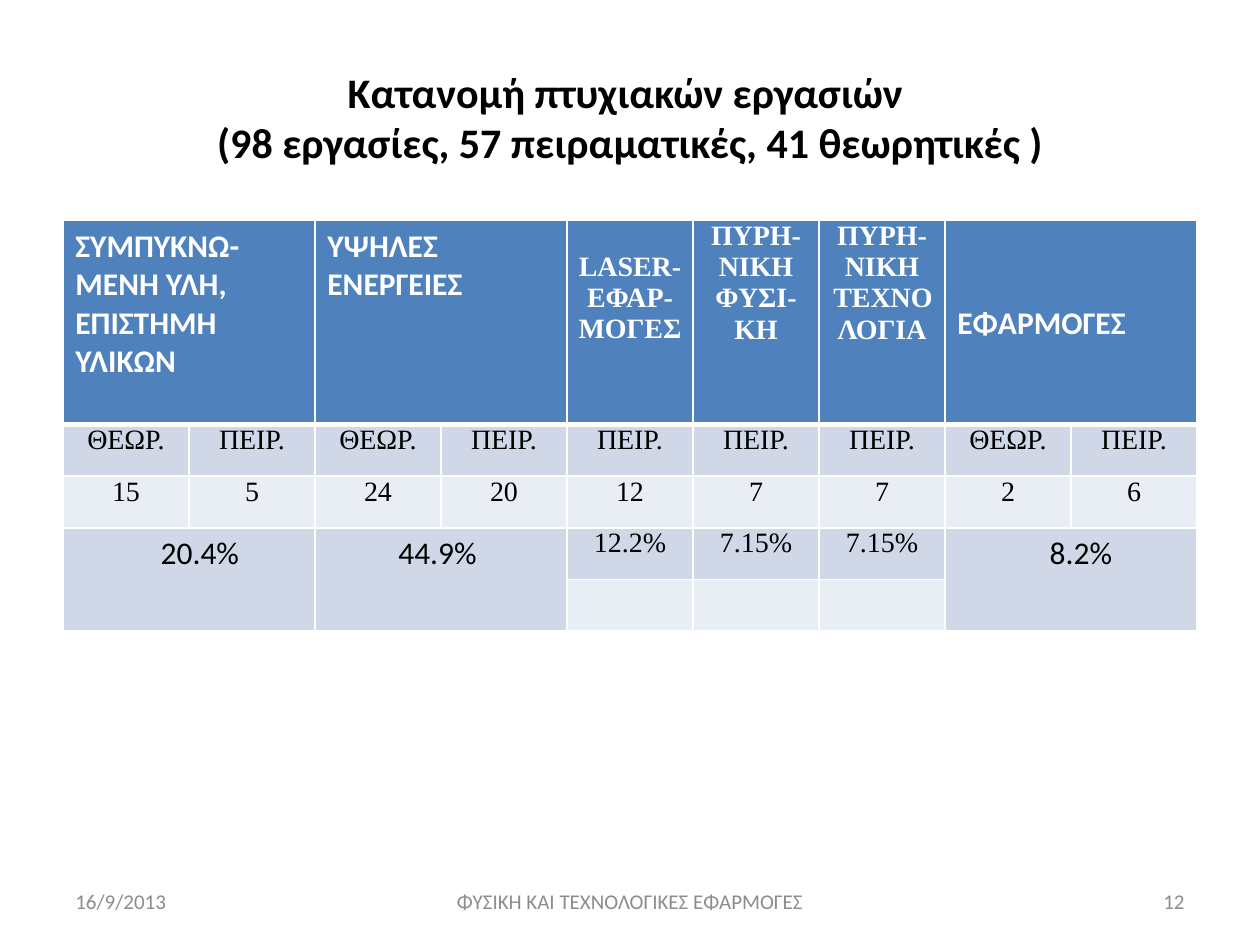
from lxml import etree
from pptx import Presentation
from pptx.dml.color import RGBColor
from pptx.enum.text import MSO_ANCHOR, PP_ALIGN
from pptx.oxml.ns import qn
from pptx.util import Cm, Pt

LEFT, CENTER, RIGHT = PP_ALIGN.LEFT, PP_ALIGN.CENTER, PP_ALIGN.RIGHT
MIDDLE = MSO_ANCHOR.MIDDLE
TITLE_ONLY = 5
SANS, SERIF = "Calibri", "Times New Roman"
COLORS = {
    "text": "000000",
    "white": "FFFFFF",
    "header": "4F81BD",
    "band": "D0D8E8",
    "light": "E9EDF4",
    "footer": "8C8C8C",
}


class SlideBuilder:
    def __init__(self, slide):
        self.slide = slide

    def add_run(self, paragraph, text, size, font=SANS, color="text", bold=False):
        run = paragraph.add_run()
        run.text = text
        run.font.name = font
        run.font.size = Pt(size)
        run.font.bold = bold
        run.font.color.rgb = RGBColor.from_string(COLORS[color])

    def title(self, lines, left, top, width, height):
        shape = self.slide.shapes.title
        shape.left, shape.top = Cm(left), Cm(top)
        shape.width, shape.height = Cm(width), Cm(height)
        shape.text_frame.vertical_anchor = MIDDLE
        paragraph = shape.text_frame.paragraphs[0]
        paragraph.alignment = CENTER
        for index, line in enumerate(lines):
            if index:
                paragraph.add_line_break()
            self.add_run(paragraph, line, 24, bold=True)

    def footer(self, text, left, width, alignment):
        shape = self.slide.shapes.add_textbox(Cm(left), Cm(17.65), Cm(width), Cm(1.02))
        frame = shape.text_frame
        frame.word_wrap = True
        frame.vertical_anchor = MIDDLE
        paragraph = frame.paragraphs[0]
        paragraph.alignment = alignment
        self.add_run(paragraph, text, 12, color="footer")

    def table(self, left, top, column_width, row_heights, columns):
        rows = len(row_heights)
        shape = self.slide.shapes.add_table(
            rows, columns, Cm(left), Cm(top), Cm(column_width * columns), Cm(sum(row_heights))
        )
        table = shape.table
        for column in table.columns:
            column.width = Cm(column_width)
        for row, height in zip(table.rows, row_heights):
            row.height = Cm(height)
        for row in range(rows):
            fill = "header" if row == 0 else ("band" if row % 2 else "light")
            for column in range(columns):
                cell = table.cell(row, column)
                self.borders(cell, top=3 if row == 1 else 1, bottom=3 if row == 0 else 1)
                cell.fill.solid()
                cell.fill.fore_color.rgb = RGBColor.from_string(COLORS[fill])
        return table

    def borders(self, cell, top, bottom):
        properties = cell._tc.get_or_add_tcPr()
        for tag, width in (("a:lnL", 1), ("a:lnR", 1), ("a:lnT", top), ("a:lnB", bottom)):
            line = etree.SubElement(properties, qn(tag), w=str(Pt(width)))
            fill = etree.SubElement(line, qn("a:solidFill"))
            etree.SubElement(fill, qn("a:srgbClr"), val=COLORS["white"])

    def wide_cell(self, cell, texts, indent=0.0, drop=0.0, **style):
        cell.margin_left = Cm(0.25 + indent)
        cell.margin_top = Cm(0.13 + drop)
        for index, text in enumerate(texts):
            frame = cell.text_frame
            paragraph = frame.add_paragraph() if index else frame.paragraphs[0]
            paragraph.alignment = LEFT
            self.add_run(paragraph, text, 18, **style)

    def narrow_cell(self, cell, text, drop=0.0, **style):
        cell.margin_left = cell.margin_right = Cm(0.18)
        cell.margin_top, cell.margin_bottom = Cm(drop), Cm(0)
        paragraph = cell.text_frame.paragraphs[0]
        paragraph.alignment = CENTER
        self.add_run(paragraph, text, 16, font=SERIF, **style)


def main():
    presentation = Presentation()
    presentation.slide_width, presentation.slide_height = Cm(25.4), Cm(19.05)
    slide = presentation.slides.add_slide(presentation.slide_layouts[TITLE_ONLY])
    builder = SlideBuilder(slide)

    # Title
    builder.title(
        ["Κατανομή πτυχιακών εργασιών ", "(98 εργασίες, 57 πειραματικές, 41 θεωρητικές )"],
        1.27, 0.76, 22.86, 3.18,
    )

    # Table grid
    table = builder.table(1.27, 4.45, 2.54, [4.11] + [1.04] * 4, 9)
    header_style = {"color": "white", "bold": True}

    # Fields with two columns: column, heading, heading drop, share, share indent
    wide_fields = [
        (0, ["ΣΥΜΠΥΚΝΩ-ΜΕΝΗ ΥΛΗ,", "ΕΠΙΣΤΗΜΗ ΥΛΙΚΩΝ"], 0, "20.4%", 1.72),
        (2, ["ΥΨΗΛΕΣ ΕΝΕΡΓΕΙΕΣ"], 0, "44.9%", 1.43),
        (7, ["ΕΦΑΡΜΟΓΕΣ"], 1.55, "8.2%", 1.86),
    ]
    for column, heading, drop, share, indent in wide_fields:
        table.cell(0, column).merge(table.cell(0, column + 1))
        table.cell(3, column).merge(table.cell(4, column + 1))
        builder.wide_cell(table.cell(0, column), heading, drop=drop, **header_style)
        builder.wide_cell(table.cell(3, column), [share], indent=indent)

    # Fields with one column: column, heading, heading drop, share
    narrow_fields = [
        (4, "LASER- ΕΦΑΡ-ΜΟΓΕΣ", 0.62, "12.2%"),
        (5, "ΠΥΡΗ-ΝΙΚΗ ΦΥΣΙ-ΚΗ", 0, "7.15%"),
        (6, "ΠΥΡΗ-ΝΙΚΗ ΤΕΧΝΟΛΟΓΙΑ", 0, "7.15%"),
    ]
    for column, heading, drop, share in narrow_fields:
        builder.narrow_cell(table.cell(0, column), heading, drop=drop, **header_style)
        builder.narrow_cell(table.cell(3, column), share)

    # Kind and number of theses
    theory_columns = {column for column, *_ in wide_fields}
    for column, count in enumerate([15, 5, 24, 20, 12, 7, 7, 2, 6]):
        kind = "ΘΕΩΡ." if column in theory_columns else "ΠΕΙΡ."
        builder.narrow_cell(table.cell(1, column), kind)
        builder.narrow_cell(table.cell(2, column), str(count))

    # Footer
    builder.footer("16/9/2013", 1.27, 5.93, LEFT)
    builder.footer("ΦΥΣΙΚΗ ΚΑΙ ΤΕΧΝΟΛΟΓΙΚΕΣ ΕΦΑΡΜΟΓΕΣ", 8.68, 8.04, CENTER)
    builder.footer("12", 18.2, 5.93, RIGHT)

    presentation.save("out.pptx")


if __name__ == "__main__":
    main()
